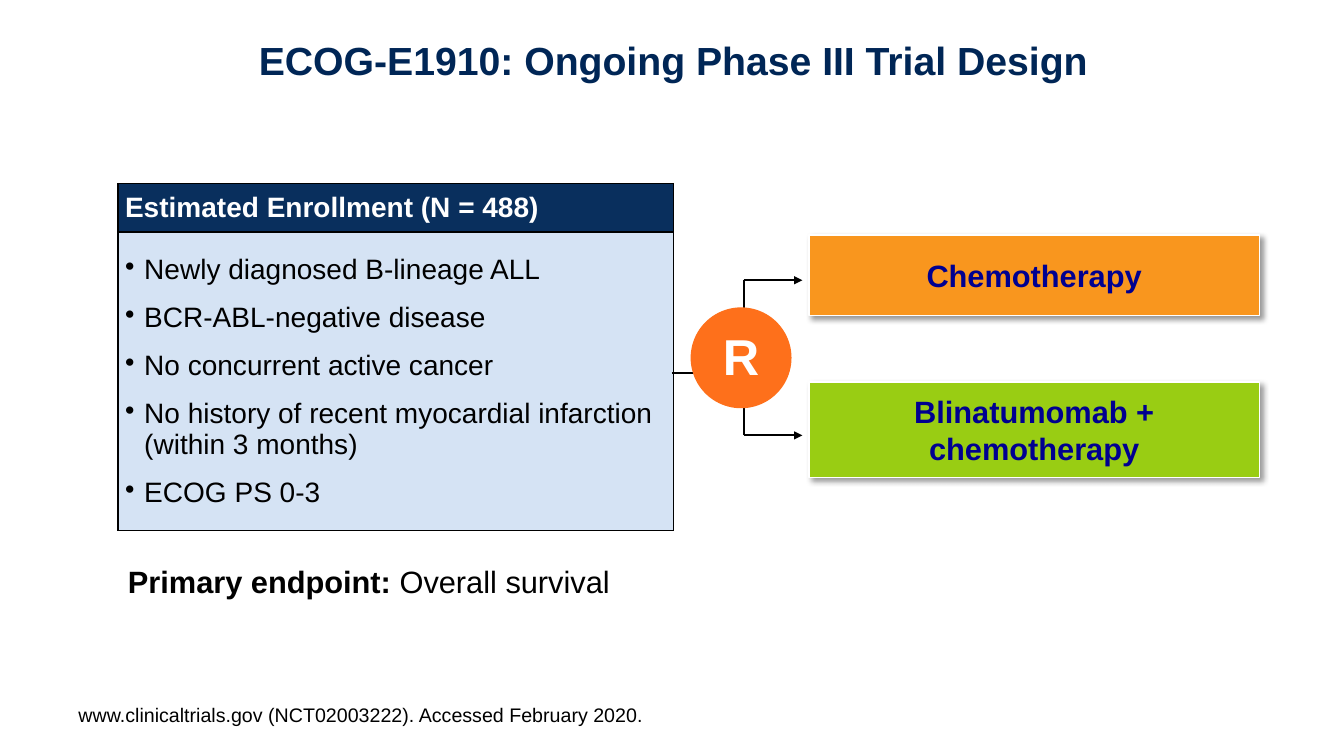
from collections import namedtuple

from lxml.etree import SubElement
from pptx import Presentation
from pptx.dml.color import RGBColor
from pptx.enum.shapes import MSO_CONNECTOR as Connector, MSO_SHAPE as Preset
from pptx.enum.text import MSO_ANCHOR as Anchor, PP_ALIGN as Align
from pptx.oxml.ns import qn
from pptx.util import Inches, Pt

Box = namedtuple("Box", "left top width height")

COLORS = {
    "title": "002656", "header": "092F5D", "criteria": "D5E3F4",
    "chemo": "F9961E", "blina": "99CD13", "arm": "000090",
    "random": "FE701B", "black": "000000", "white": "FFFFFF",
}
WIDTH, HEIGHT = Inches(13.33), Inches(7.5)
COLUMN, ROW = WIDTH / 100, HEIGHT / 100
CRITERIA = [
    "Newly diagnosed B-lineage ALL",
    "BCR-ABL-negative disease",
    "No concurrent active cancer",
    "No history of recent myocardial infarction (within 3 months)",
    "ECOG PS 0-3",
]


def grid(left, top, width, height):
    """Return the box, in EMU, of a place on the 100 by 100 grid."""
    return Box(int(left * COLUMN), int(top * ROW), int(width * COLUMN), int(height * ROW))


def rgb(name):
    """Return the named colour."""
    return RGBColor.from_string(COLORS[name])


def style(para, size, color, bold=None, align=Align.LEFT):
    """Set the font and alignment of a paragraph."""
    para.alignment = align
    font = para.font
    font.name, font.size, font.bold = "Arial", Pt(size), bold
    font.color.rgb = rgb(color)


def text_box(page, box, wrap=True):
    """Add an empty text box and return its frame."""
    frame = page.shapes.add_textbox(*box).text_frame
    frame.word_wrap = wrap
    return frame


def add_title(page, box):
    """Place the centred slide title."""
    frame = text_box(page, box)
    frame.vertical_anchor = Anchor.MIDDLE
    para = frame.paragraphs[0]
    para.text = "ECOG-E1910: Ongoing Phase III Trial Design"
    para.line_spacing = 0.9
    style(para, 28, "title", True, Align.CENTER)


def add_source(page, box):
    """Place the source line."""
    para = text_box(page, box, wrap=False).paragraphs[0]
    para.text = "www.clinicaltrials.gov (NCT02003222). Accessed February 2020."
    style(para, 14, "black")


def add_endpoint(page, box):
    """Place the primary endpoint with its bold label."""
    para = text_box(page, box).paragraphs[0]
    for words, bold in (("Primary endpoint: ", True), ("Overall survival", False)):
        span = para.add_run()
        span.text, span.font.bold = words, bold
    style(para, 22, "black")


def format_cell(cell, fill):
    """Give a cell its borders, fill and margins."""
    props = cell._tc.get_or_add_tcPr()
    for side in "LRTB":
        line = SubElement(props, qn(f"a:ln{side}"), w=str(Pt(1)))
        SubElement(SubElement(line, qn("a:solidFill")), qn("a:srgbClr"), val=COLORS["black"])
    cell.fill.solid()
    cell.fill.fore_color.rgb = rgb(fill)
    cell.vertical_anchor = Anchor.MIDDLE
    cell.margin_left = cell.margin_right = Inches(0.07)
    cell.margin_top = cell.margin_bottom = Inches(0.04)


def add_bullet(para):
    """Turn a paragraph into a hanging bullet."""
    props = para._p.get_or_add_pPr()
    props.set("marL", str(Inches(0.19)))
    props.set("indent", str(-Inches(0.19)))
    SubElement(props, qn("a:buChar"), char="•")


def add_enrollment(page, box):
    """Place the table of enrollment criteria."""
    table = page.shapes.add_table(2, 1, *box).table
    table.rows[0].height = int(box.height * 0.14)
    table.rows[1].height = box.height - table.rows[0].height
    header, body = table.cell(0, 0), table.cell(1, 0)
    format_cell(header, "header")
    format_cell(body, "criteria")
    heading = header.text_frame.paragraphs[0]
    heading.text = "Estimated Enrollment (N = 488)"
    heading.space_before = Pt(12)
    style(heading, 20, "white", True)
    body.text_frame.text = "\n".join(CRITERIA)
    for para in body.text_frame.paragraphs:
        para.space_before = para.space_after = Pt(6)
        style(para, 20, "black", False)
        add_bullet(para)


def add_line(page, start, end, arrow=False):
    """Draw a black line, with an arrowhead at its end if asked."""
    connector = page.shapes.add_connector(Connector.STRAIGHT, *start, *end)
    connector.line.color.rgb = rgb("black")
    connector.line.width = Pt(1.5)
    if arrow:
        SubElement(connector.line._get_or_add_ln(), qn("a:tailEnd"), type="triangle")
    SubElement(connector._element.spPr, qn("a:effectLst"))


def add_shape(page, preset, box, fill, words, size, color):
    """Add a filled shape with centred bold text."""
    shape = page.shapes.add_shape(preset, *box)
    shape.shadow.inherit = False
    shape.fill.solid()
    shape.fill.fore_color.rgb = rgb(fill)
    shape.line.fill.background()
    frame = shape.text_frame
    frame.word_wrap = True
    frame.vertical_anchor = Anchor.MIDDLE
    frame.text = words
    style(frame.paragraphs[0], size, color, True, Align.CENTER)
    return shape


def add_randomization(page, box):
    """Draw the forked arrows and the randomization circle."""
    def point(across, down):
        return int(box.left + across * box.width), int(box.top + down * box.height)

    trunk = 0.55
    add_line(page, point(0, 0.6), point(0.39, 0.6))
    add_line(page, point(trunk, 1), point(trunk, 0))
    for branch in (1, 0):
        add_line(page, point(trunk, branch), point(1, branch), arrow=True)
    size = int(box.height * 0.65)
    x, y = point(0.53, 0.5)
    circle = Box(x - size // 2, y - size // 2, size, size)
    frame = add_shape(page, Preset.OVAL, circle, "random", "R", 36, "white").text_frame
    frame.margin_left = frame.margin_right = frame.margin_top = 0
    frame.margin_bottom = Inches(0.05)


def add_arm(page, box, fill, words):
    """Place a treatment arm with its white edge and soft shadow."""
    arm = add_shape(page, Preset.RECTANGLE, box, fill, words, 22, "arm")
    arm.line.color.rgb = rgb("white")
    arm.line.width = Pt(1)
    effects = arm._element.spPr.find(qn("a:effectLst"))
    shadow = SubElement(effects, qn("a:outerShdw"), blurRad=str(Pt(4)), dist=str(Pt(3)),
                        dir=str(45 * 60000), algn="tl", rotWithShape="0")
    color = SubElement(shadow, qn("a:srgbClr"), val=COLORS["black"])
    SubElement(color, qn("a:alpha"), val="40000")


def main():
    """Build and save the trial design slide."""
    deck = Presentation()
    deck.slide_width, deck.slide_height = WIDTH, HEIGHT
    page = deck.slides.add_slide(deck.slide_layouts[6])
    add_title(page, grid(3.9, 0, 92.4, 16.67))
    add_source(page, grid(5.1, 92.27, 43.7, 4.53))
    add_endpoint(page, grid(8.78, 73.73, 60, 6.27))
    add_enrollment(page, grid(8.78, 24.27, 41.33, 45.87))
    add_arm(page, grid(60.2, 31.07, 33.5, 10.67), "chemo", "Chemotherapy")
    add_arm(page, grid(60.2, 50.53, 33.5, 12.67), "blina", "Blinatumomab + chemotherapy")
    add_randomization(page, grid(50, 37.07, 9.7, 20.53))
    deck.save("out.pptx")


if __name__ == "__main__":
    main()
